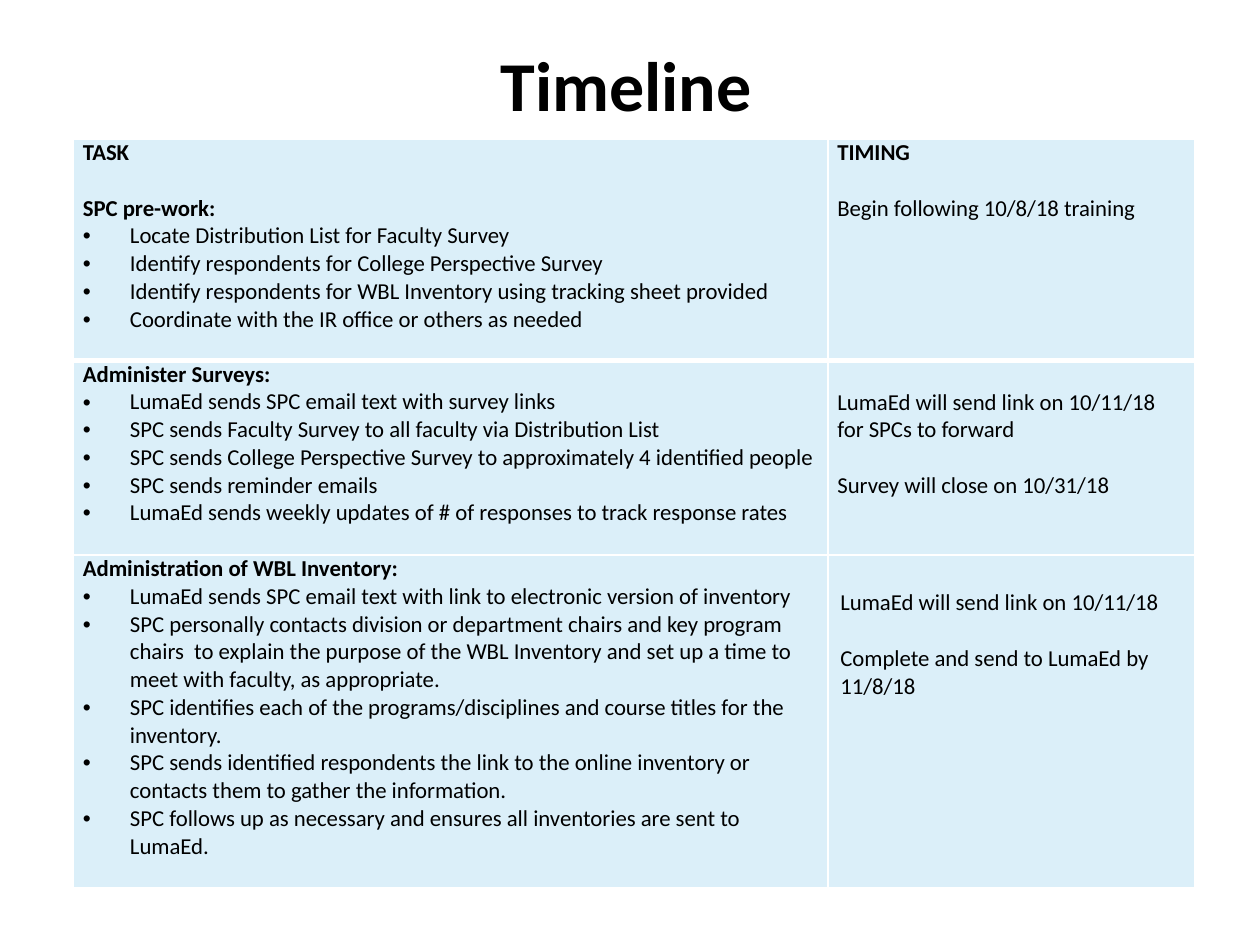
from lxml.etree import SubElement
from pptx import Presentation
from pptx.dml.color import RGBColor as Rgb
from pptx.enum.text import MSO_ANCHOR as Anchor, PP_ALIGN as Align
from pptx.oxml.ns import qn
from pptx.util import Cm, Pt

COLORS = {"text": "000000", "cell": "DBEFF9", "border": "FFFFFF"}
FONT = "Calibri"
BODY_SIZE = 13
BLANK_LINE = Pt(15.9)
COLUMN_WIDTHS = [15.21, 7.39]
ROW_HEIGHTS = [4.47, 3.92, 6.7]
RULE_BELOW_FIRST_ROW = 3

# Entries are (style, text); styles: head, item, plain; a "+" adds a line of space before.
TASKS = [
    [("head", "TASK"),
     ("head+", "SPC pre-work:"),
     ("item", "Locate Distribution List for Faculty Survey"),
     ("item", "Identify respondents for College Perspective Survey"),
     ("item", "Identify respondents for WBL Inventory using tracking sheet provided"),
     ("item", "Coordinate with the IR office or others as needed")],
    [("head", "Administer Surveys:"),
     ("item", "LumaEd sends SPC email text with survey links"),
     ("item", "SPC sends Faculty Survey to all faculty via Distribution List"),
     ("item", "SPC sends College Perspective Survey to approximately 4 identified people"),
     ("item", "SPC sends reminder emails"),
     ("item", "LumaEd sends weekly updates of # of responses to track response rates")],
    [("head", "Administration of WBL Inventory:"),
     ("item", "LumaEd sends SPC email text with link to electronic version of inventory"),
     ("item", "SPC personally contacts division or department chairs and key program "
              "chairs  to explain the purpose of the WBL Inventory and set up a time to "
              "meet with faculty, as appropriate."),
     ("item", "SPC identifies each of the programs/disciplines and course titles for the "
              "inventory."),
     ("item", "SPC sends identified respondents the link to the online inventory or "
              "contacts them to gather the information."),
     ("item", "SPC follows up as necessary and ensures all inventories are sent to LumaEd.")],
]
TIMINGS = [
    [("head", "TIMING"), ("plain+", "Begin following 10/8/18 training")],
    [("plain", "LumaEd will send link on 10/11/18 for SPCs to forward"),
     ("plain+", "Survey will close on 10/31/18")],
    [("plain", "LumaEd will send link on 10/11/18"),
     ("plain+", "Complete and send to LumaEd by 11/8/18")],
]
TIMING_INSETS = [(0.19, 0), (0.19, 0.56), (0.25, 0.69)]


def style_font(font, size, bold):
    """Apply the slide's typeface and text colour."""
    font.name, font.size, font.bold = FONT, Pt(size), bold
    font.color.rgb = Rgb.from_string(COLORS["text"])


def add_bullet(para):
    """Give a paragraph a round bullet with a hanging indent."""
    props = para._p.get_or_add_pPr()
    props.set("marL", str(Cm(0.95)))
    props.set("indent", str(-Cm(0.95)))
    SubElement(props, qn("a:buFont")).set("typeface", "Arial")
    SubElement(props, qn("a:buChar")).set("char", "•")


def add_borders(cell, top, bottom):
    """Draw the four cell borders; widths are in points."""
    props = cell._tc.get_or_add_tcPr()
    for side, width in (("L", 1), ("R", 1), ("T", top), ("B", bottom)):
        line = SubElement(props, qn(f"a:ln{side}"), w=str(Pt(width)))
        fill = SubElement(line, qn("a:solidFill"))
        SubElement(fill, qn("a:srgbClr")).set("val", COLORS["border"])


def fill_cell(cell, entries, inset, row):
    """Write the entries of one cell and set its look."""
    add_borders(cell, RULE_BELOW_FIRST_ROW if row == 1 else 1,
                RULE_BELOW_FIRST_ROW if row == 0 else 1)
    cell.fill.solid()
    cell.fill.fore_color.rgb = Rgb.from_string(COLORS["cell"])
    side, top = inset
    cell.margin_left = cell.margin_right = Cm(side)
    cell.margin_top, cell.margin_bottom = Cm(top), 0
    cell.vertical_anchor = Anchor.TOP
    frame = cell.text_frame
    frame.text = "\n".join(text for _, text in entries)
    for para, (style, _) in zip(frame.paragraphs, entries):
        if style.endswith("+"):
            para.space_before = BLANK_LINE
        if style == "item":
            add_bullet(para)
        style_font(para.runs[0].font, BODY_SIZE, style.startswith("head"))


def add_timeline(page):
    """Add the table of tasks and their timing."""
    frame = page.shapes.add_table(len(ROW_HEIGHTS), len(COLUMN_WIDTHS), Cm(1.48), Cm(2.8),
                                  Cm(sum(COLUMN_WIDTHS)), Cm(sum(ROW_HEIGHTS)))
    table = frame.table
    table.first_row = table.horz_banding = False
    for column, width in zip(table.columns, COLUMN_WIDTHS):
        column.width = Cm(width)
    for index, height in enumerate(ROW_HEIGHTS):
        table.rows[index].height = Cm(height)
        fill_cell(table.cell(index, 0), TASKS[index], (0.19, 0), index)
        fill_cell(table.cell(index, 1), TIMINGS[index], TIMING_INSETS[index], index)


def add_title(page, text):
    """Add the centred slide title."""
    box = page.shapes.add_textbox(Cm(1.32), Cm(0.71), Cm(22.61), Cm(1.96))
    frame = box.text_frame
    frame.word_wrap = True
    frame.text = text
    para = frame.paragraphs[0]
    para.alignment = Align.CENTER
    style_font(para.runs[0].font, 40, True)


def main():
    """Build the timeline slide and save it."""
    deck = Presentation()
    deck.slide_width, deck.slide_height = Cm(25.4), Cm(19.05)
    page = deck.slides.add_slide(deck.slide_layouts[6])
    add_timeline(page)
    add_title(page, "Timeline")
    deck.save("out.pptx")


if __name__ == "__main__":
    main()
